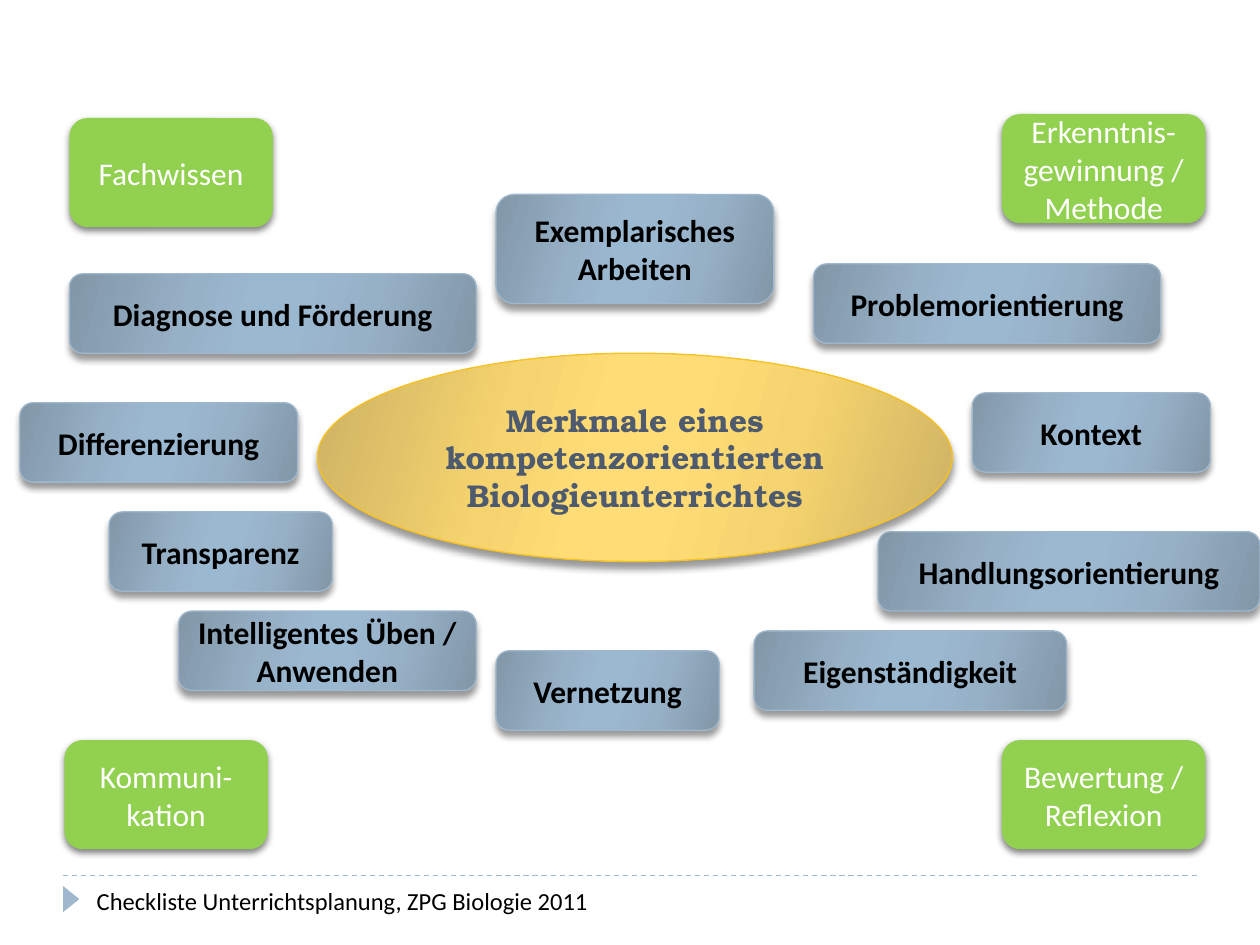
"""Build a slide showing the features of competence-oriented biology lessons."""
from lxml.etree import SubElement
from pptx import Presentation
from pptx.dml.color import RGBColor
from pptx.enum.dml import MSO_LINE
from pptx.enum.shapes import MSO_CONNECTOR, MSO_SHAPE
from pptx.enum.text import MSO_ANCHOR, PP_ALIGN
from pptx.oxml.ns import qn
from pptx.util import Cm, Pt

BLACK = RGBColor(0x00, 0x00, 0x00)
WHITE = RGBColor(0xFF, 0xFF, 0xFF)
GREEN = RGBColor(0x92, 0xD0, 0x50)
SLATE = RGBColor(0x4E, 0x5B, 0x6F)
BLUE = RGBColor(0x9F, 0xB8, 0xCD)
BLUE_SHADES = (RGBColor(0x82, 0x97, 0xA8), RGBColor(0x96, 0xB0, 0xC6), RGBColor(0x9B, 0xB8, 0xD1))
GOLD = RGBColor(0xF7, 0xC1, 0x20)
GOLD_SHADES = (RGBColor(0xCD, 0xB2, 0x64), RGBColor(0xF5, 0xD3, 0x6E), RGBColor(0xFF, 0xDC, 0x75))
STOPS = ((0, 0), (30, 1), (45, 2), (55, 2), (73, 1), (100, 0))

TOPIC = {"kind": MSO_SHAPE.ROUNDED_RECTANGLE, "shades": BLUE_SHADES, "line": BLUE, "shadow": (40, 3.4),
         "font": {"name": "Calibri", "size": Pt(18), "bold": True}, "color": BLACK}
CENTRE = {"kind": MSO_SHAPE.OVAL, "shades": GOLD_SHADES, "line": GOLD, "shadow": (40, 3.4),
          "font": {"name": "TeX Gyre Bonum", "size": Pt(18), "bold": True}, "color": SLATE}
AREA = {"kind": MSO_SHAPE.ROUNDED_RECTANGLE, "shades": None, "line": None, "shadow": (50, 2),
        "font": {"name": "Calibri", "size": Pt(18), "bold": False}, "color": WHITE}
FOOTER_FONT = {"name": "Calibri", "size": Pt(14), "bold": False}

BOXES = (
    ("Problemorientierung", 16.4, 5.32, 7, 1.6, TOPIC),
    ("Intelligentes Üben / Anwenden", 3.6, 12.32, 6, 1.6, TOPIC),
    ("Differenzierung", 0.4, 8.12, 5.6, 1.6, TOPIC),
    ("Handlungsorientierung", 17.7, 10.72, 7.7, 1.6, TOPIC),
    ("Vernetzung", 10, 13.12, 4.5, 1.6, TOPIC),
    ("Kontext", 19.6, 7.92, 4.8, 1.6, TOPIC),
    ("Diagnose und Förderung", 1.4, 5.52, 8.2, 1.6, TOPIC),
    ("Transparenz", 2.2, 10.32, 4.5, 1.6, TOPIC),
    ("Merkmale eines kompetenzorientierten Biologieunterrichtes", 6.4, 7.12, 12.8, 4.2, CENTRE),
    ("Eigenständigkeit", 15.2, 12.72, 6.3, 1.6, TOPIC),
    ("Exemplarisches\vArbeiten", 10, 3.92, 5.6, 2.2, TOPIC),
    ("Kommuni-kation", 1.3, 14.92, 4.1, 2.2, AREA),
    ("Bewertung /\vReflexion", 20.2, 14.92, 4.1, 2.2, AREA),
    ("Fachwissen", 1.4, 2.38, 4.1, 2.2, AREA),
    ("Erkenntnis-gewinnung /\vMethode", 20.2, 2.3, 4.1, 2.2, AREA),
)


def write(box, text, font, color):
    para = box.text_frame.paragraphs[0]
    box.text_frame.word_wrap = True
    para.text = text
    for span in para.runs:
        for name, value in font.items():
            setattr(span.font, name, value)
        span.font.color.rgb = color
    return para


def shade(box, shades):
    box.fill.gradient()
    box.fill.gradient_angle = 344
    stop_list = box.element.spPr.find(qn("a:gradFill")).find(qn("a:gsLst"))
    for stop in list(stop_list):
        stop_list.remove(stop)
    for position, index in STOPS:
        stop = SubElement(stop_list, qn("a:gs"), pos=str(position * 1000))
        SubElement(stop, qn("a:srgbClr"), val=str(shades[index]))


deck = Presentation()
deck.slide_width, deck.slide_height = Cm(25.4), Cm(19.05)
page = deck.slides.add_slide(deck.slide_layouts[6])

rule = page.shapes.add_connector(MSO_CONNECTOR.STRAIGHT, Cm(1.27), Cm(17.65), Cm(24.13), Cm(17.65))
rule.line.color.rgb = BLUE
rule.line.width = Pt(0.75)
rule.line.dash_style = MSO_LINE.DASH
SubElement(rule.element.spPr, qn("a:effectLst"))

marker = page.shapes.add_shape(MSO_SHAPE.ISOSCELES_TRIANGLE, Cm(1.17), Cm(17.96), Cm(0.53), Cm(0.33))
marker.rotation = 90
marker.shadow.inherit = False
marker.fill.solid()
marker.fill.fore_color.rgb = BLUE
marker.line.fill.background()

for text, left, top, width, height, style in BOXES:
    box = page.shapes.add_shape(style["kind"], Cm(left), Cm(top), Cm(width), Cm(height))
    if style["shades"]:
        shade(box, style["shades"])
        box.line.color.rgb = style["line"]
        box.line.width = Pt(0.75)
    else:
        box.fill.solid()
        box.fill.fore_color.rgb = GREEN
        box.line.fill.background()
    box.shadow.inherit = False
    opacity, distance = style["shadow"]
    shadow = SubElement(box.element.spPr.find(qn("a:effectLst")), qn("a:outerShdw"),
                        blurRad=str(Pt(4)), dist=str(Pt(distance)), dir="5400000", rotWithShape="0")
    shadow_color = SubElement(shadow, qn("a:srgbClr"), val=str(BLACK))
    SubElement(shadow_color, qn("a:alpha"), val=str(opacity * 1000))
    box.text_frame.vertical_anchor = MSO_ANCHOR.MIDDLE
    write(box, text, style["font"], style["color"]).alignment = PP_ALIGN.CENTER

footer = page.shapes.add_textbox(Cm(1.7), Cm(17.73), Cm(22.4), Cm(0.86))
write(footer, "Checkliste Unterrichtsplanung, ZPG Biologie 2011", FOOTER_FONT, BLACK)

deck.save("out.pptx")
